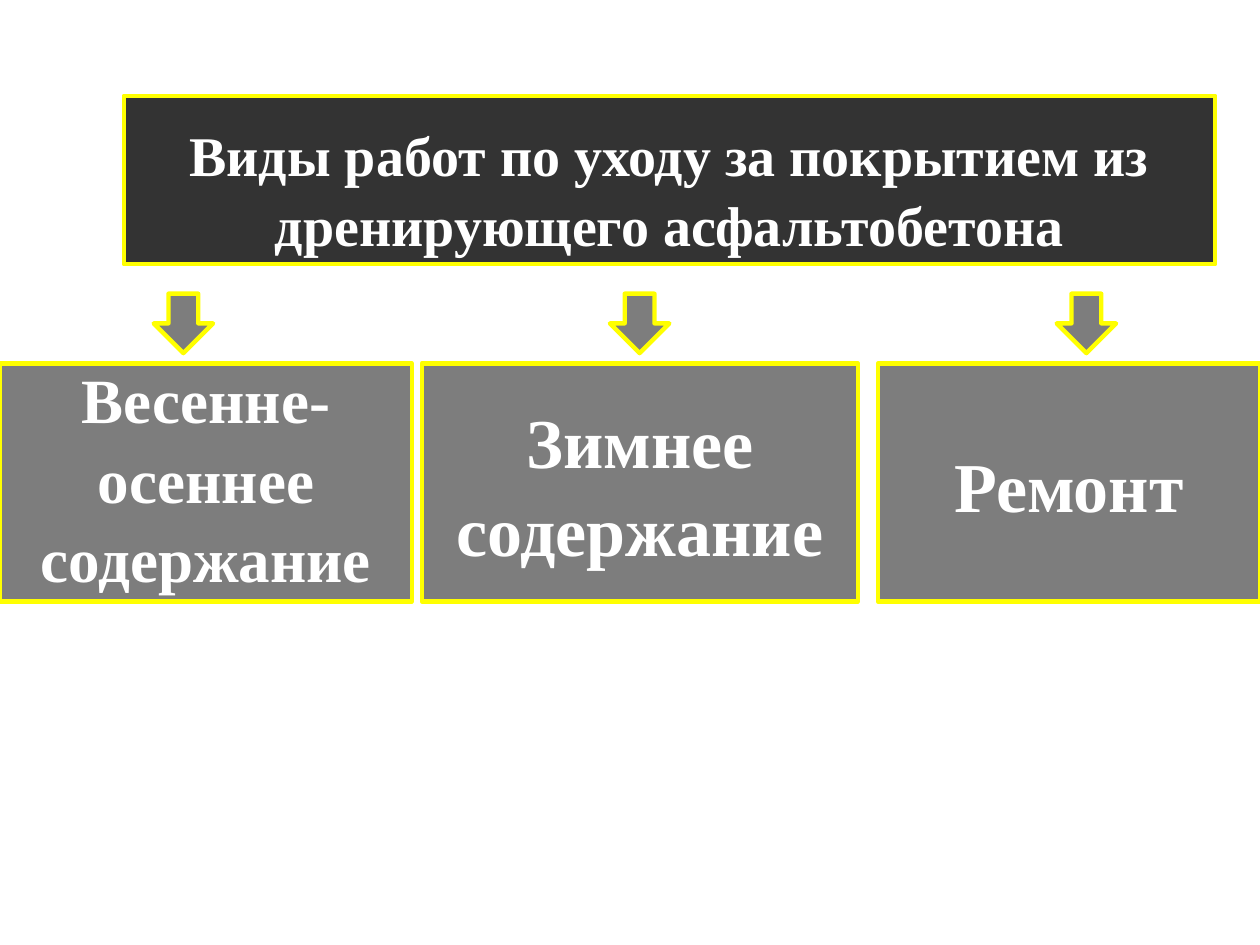
import pptx
import pptx.dml.color
import pptx.enum.shapes
import pptx.enum.text
import pptx.oxml.ns
import pptx.util
from lxml import etree

Pt = pptx.util.Pt
SHAPE = pptx.enum.shapes.MSO_SHAPE
ANCHOR = pptx.enum.text.MSO_ANCHOR


def rgb(value):
    return pptx.dml.color.RGBColor.from_string(value)


class Builder:
    """Draws outlined, translucent elements on the current slide."""

    font = "Times New Roman"
    fill, outline, text = "000000", "FFFF00", "FFFFFF"

    def __init__(self, slide):
        self.s = slide

    def shape(self, kind, left, top, width, height, opacity=51):
        sp = self.s.shapes.add_shape(kind, Pt(left), Pt(top), Pt(width), Pt(height))
        sp.shadow.inherit = False
        sp.fill.solid()
        sp.fill.fore_color.rgb = rgb(self.fill)
        color = sp.fill._xPr.find(".//" + pptx.oxml.ns.qn("a:srgbClr"))
        alpha = etree.SubElement(color, pptx.oxml.ns.qn("a:alpha"))
        alpha.set("val", str(opacity * 1000))
        sp.line.color.rgb = rgb(self.outline)
        sp.line.width = Pt(2.5)
        return sp

    def box(self, text, left, top, width, height, size, anchor, opacity=51):
        sp = self.shape(SHAPE.RECTANGLE, left, top, width, height, opacity)
        tf = sp.text_frame
        tf.word_wrap = True
        tf.vertical_anchor = anchor
        tf.text = text
        p = tf.paragraphs[0]
        p.alignment = pptx.enum.text.PP_ALIGN.CENTER
        p.line_spacing = 1.05
        r = p.runs[0]
        r.font.name = self.font
        r.font.size = Pt(size)
        r.font.bold = True
        r.font.color.rgb = rgb(self.text)

    def arrow(self, left, top, size=34):
        self.shape(SHAPE.DOWN_ARROW, left, top, size, size)


def main():
    prs = pptx.Presentation()
    prs.slide_width, prs.slide_height = Pt(720), Pt(540)
    b = Builder(prs.slides.add_slide(prs.slide_layouts[6]))

    b.box("Виды работ по уходу за покрытием из дренирующего асфальтобетона",
          70.7, 54.7, 623.7, 96.3, 32, ANCHOR.BOTTOM, opacity=80)

    works = [
        ("Весенне-осеннее содержание", 0, 235.3, 36, ANCHOR.BOTTOM, 87.8),
        ("Зимнее содержание", 241, 249.3, 40, ANCHOR.MIDDLE, 348.5),
        ("Ремонт", 501.7, 218.3, 40, ANCHOR.MIDDLE, 603.8),
    ]
    for text, left, width, size, anchor, arrow_left in works:
        b.box(text, left, 207.7, width, 136, size, anchor)
        b.arrow(arrow_left, 167.8)

    prs.save("out.pptx")


if __name__ == "__main__":
    main()
